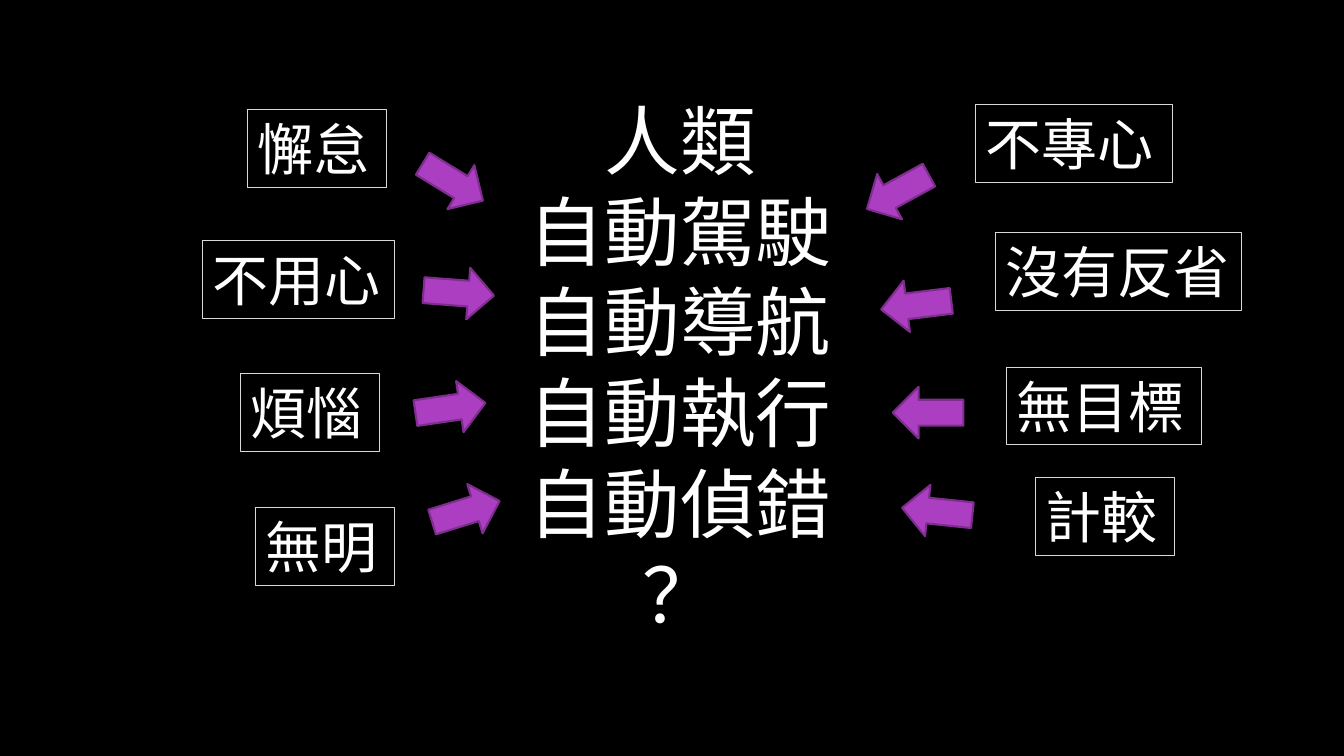
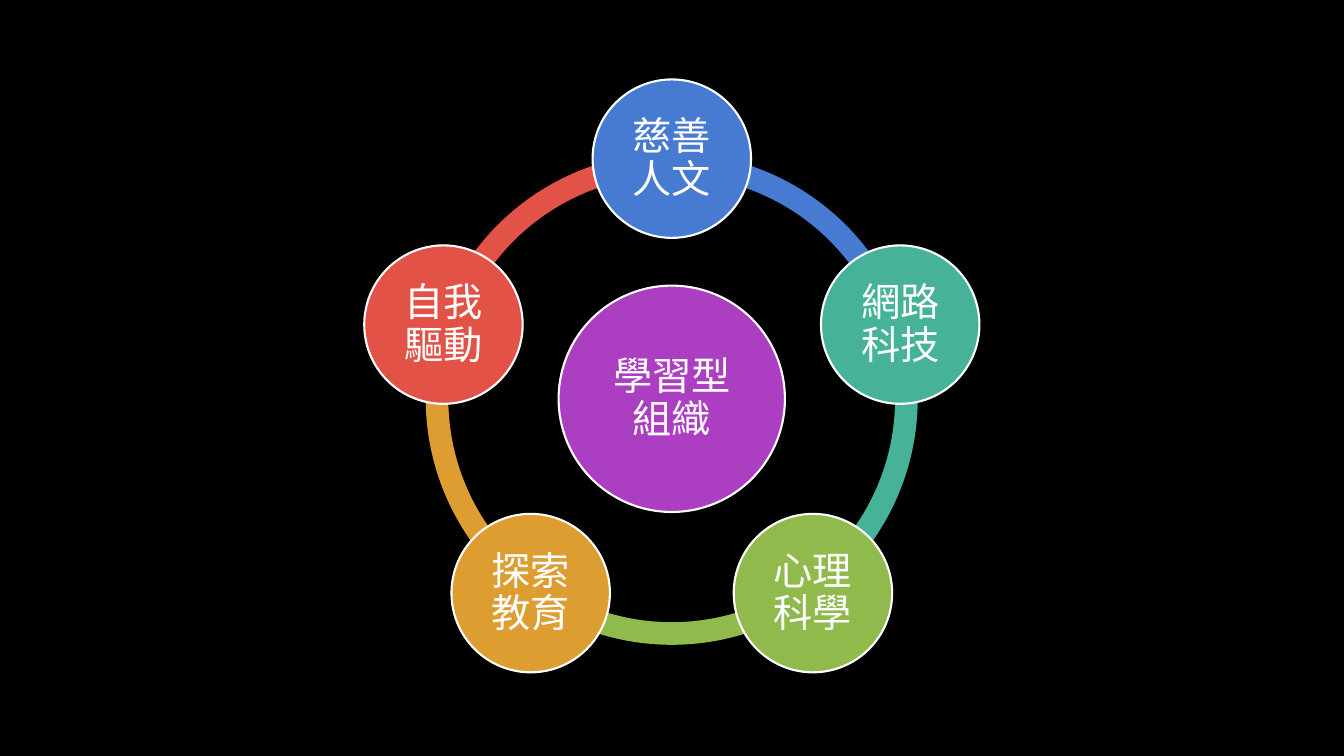
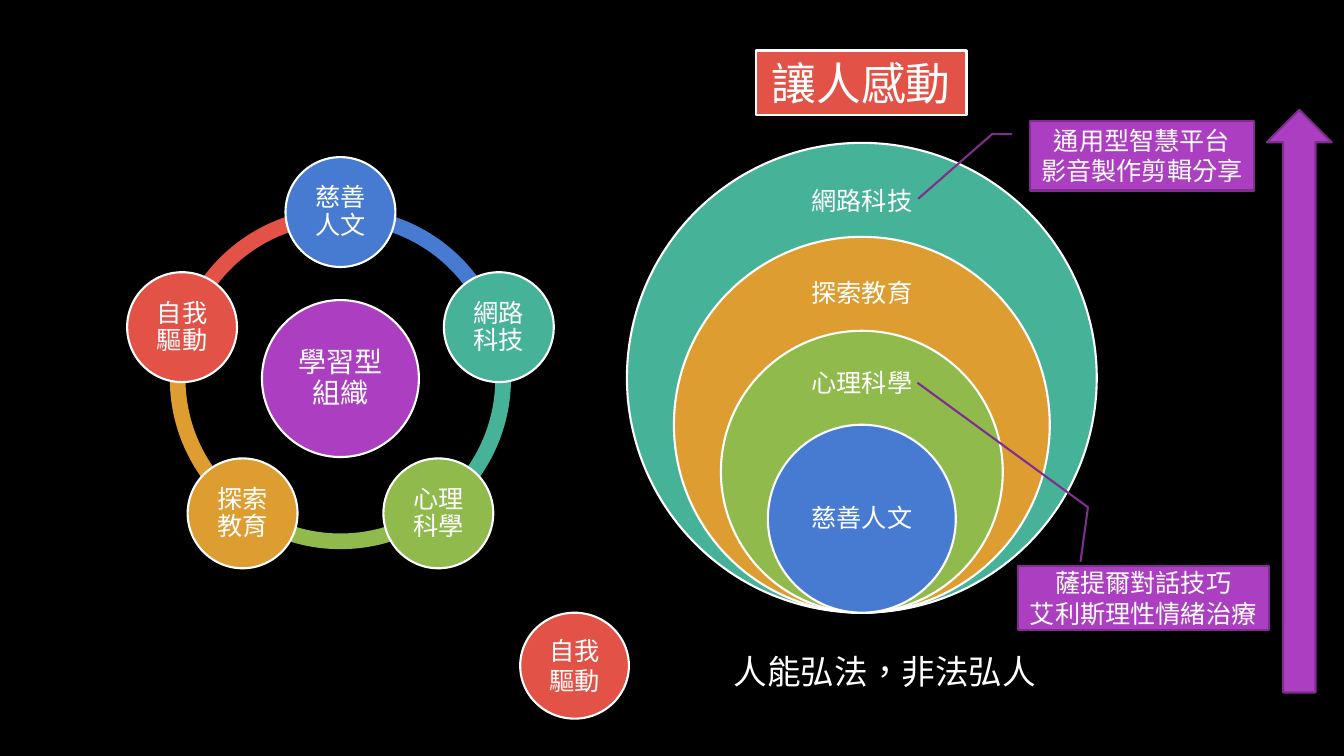
from dataclasses import dataclass
from math import cos, radians, sin
from typing import Optional

from lxml.etree import SubElement
from pptx import Presentation
from pptx.dml.color import RGBColor
from pptx.enum.shapes import MSO_SHAPE as Shape
from pptx.enum.text import MSO_ANCHOR as Anchor, MSO_AUTO_SIZE as AutoSize, PP_ALIGN as Align
from pptx.oxml.ns import qn
from pptx.util import Cm, Pt

FONT = "Noto Sans CJK SC"
BLACK, WHITE, GRAY = "000000", "FFFFFF", "D9D9D9"
PURPLE, PLUM = "AC3EC1", "7F2E8F"
BLUE, TEAL, GREEN, AMBER, RED = "477BD1", "46B298", "90BA4C", "DD9D31", "E25247"
TITLE_ONLY, BLANK = 5, 6


@dataclass
class Box:
    x: float
    y: float
    w: float
    h: float


@dataclass
class Topic:
    text: str
    color: str


@dataclass
class Ring:
    cx: float
    cy: float
    d: float
    hub_size: float
    node_size: float


@dataclass
class Layer:
    text: str
    color: str
    scale: float
    text_y: float


@dataclass
class Label:
    text: str
    box: Box


@dataclass
class Arrow:
    x: float
    y: float
    angle: float


@dataclass
class Callout:
    text: str
    box: Box
    adj: tuple


TOPICS = [
    Topic("慈善人文", BLUE),
    Topic("網路科技", TEAL),
    Topic("心理科學", GREEN),
    Topic("探索教育", AMBER),
    Topic("自我驅動", RED),
]
LAYERS = [
    Layer("網路科技", TEAL, 1, 5.08),
    Layer("探索教育", AMBER, 0.8, 7.4),
    Layer("心理科學", GREEN, 0.6, 9.68),
    Layer("慈善人文", BLUE, 0.4, 13.08),
]
LABELS = [
    Label("懈怠", Box(6.25, 2.77, 3.5, 1.96)),
    Label("不用心", Box(5.1, 6.07, 4.85, 1.96)),
    Label("煩惱", Box(6.07, 9.42, 3.5, 1.96)),
    Label("無明", Box(6.45, 12.8, 3.5, 1.96)),
    Label("不專心", Box(24.59, 2.64, 4.95, 1.96)),
    Label("沒有反省", Box(25.1, 5.87, 6.2, 1.96)),
    Label("無目標", Box(25.37, 9.25, 4.9, 1.96)),
    Label("計較", Box(26.09, 12.04, 3.5, 1.96)),
]
ARROWS = [
    Arrow(10.52, 3.94, 211.5),
    Arrow(10.67, 6.73, 184.4),
    Arrow(10.46, 9.63, 171.7),
    Arrow(10.85, 12.24, 162.7),
    Arrow(21.74, 4.19, 331.3),
    Arrow(22.2, 7.04, 353),
    Arrow(22.5, 9.75, 0),
    Arrow(22.73, 12.24, 6),
]
CALLOUTS = [
    Callout("通用型智慧平台\n影音製作剪輯分享", Box(25.96, 3.05, 5.64, 1.75),
            (0.19, -0.08, 0.19, -0.17, 1.12, -0.5)),
    Callout("薩提爾對話技巧\n艾利斯理性情緒治療", Box(25.65, 14.27, 6.32, 1.6),
            (-0.07, 0.25, -0.93, 0.28, -2.89, -0.4)),
]


def rgb(color: str) -> RGBColor:
    return RGBColor.from_string(color)


def centered(cx: float, cy: float, w: float, h: float) -> Box:
    return Box(cx - w / 2, cy - h / 2, w, h)


def lengths(box: Box) -> tuple:
    return Cm(box.x), Cm(box.y), Cm(box.w), Cm(box.h)


def paint(s, fill: Optional[str], line: Optional[str], width: float) -> None:
    if fill:
        s.fill.solid()
        s.fill.fore_color.rgb = rgb(fill)
    else:
        s.fill.background()
    if line:
        s.line.color.rgb = rgb(line)
        s.line.width = Pt(width)
    else:
        s.line.fill.background()


def add_shape(slide, kind, box: Box, fill: Optional[str] = None, line: Optional[str] = None,
              width: float = 1.5, angle: float = 0, adj: tuple = ()):
    s = slide.shapes.add_shape(kind, *lengths(box))
    s.shadow.inherit = False
    s.rotation = angle
    for i, value in enumerate(adj):
        s.adjustments[i] = value
    paint(s, fill, line, width)
    return s


def write(s, text: str, *, size: float, font: str = FONT, align=Align.CENTER,
          anchor=Anchor.MIDDLE, spacing: float = 1.2, inset: Optional[float] = None) -> None:
    tf = s.text_frame
    tf.word_wrap = True
    tf.auto_size = AutoSize.NONE
    tf.vertical_anchor = anchor
    if inset is not None:
        tf.margin_left = tf.margin_right = tf.margin_top = tf.margin_bottom = Cm(inset)
    for i, line in enumerate(text.split("\n")):
        p = tf.add_paragraph() if i else tf.paragraphs[0]
        p.alignment = align
        p.line_spacing = Pt(round(size * spacing, 1))
        r = p.add_run()
        r.text = line
        r.font.size = Pt(size)
        r.font.name = font
        r.font.color.rgb = rgb(WHITE)
        rPr = r.font._element
        rPr.set("lang", "zh-TW")
        SubElement(rPr, qn("a:ea")).set("typeface", FONT)


def add_text(slide, text: str, box: Box, **style) -> None:
    write(slide.shapes.add_textbox(*lengths(box)), text, **style)


def set_title(slide, text: str, box: Box, **style):
    s = slide.shapes.title
    s.left, s.top, s.width, s.height = lengths(box)
    write(s, text, anchor=Anchor.TOP, **style)
    return s


def add_disc(slide, cx: float, cy: float, d: float, topic: Topic, size: float) -> None:
    s = add_shape(slide, Shape.OVAL, centered(cx, cy, d, d), topic.color, WHITE)
    write(s, topic.text, size=size, spacing=1.08, inset=0.08)


def add_ring(slide, ring: Ring) -> None:
    step = 360 / len(TOPICS)
    angles = [270 + step * i for i in range(len(TOPICS))]
    for topic, angle in zip(TOPICS, angles):
        ends = (angle % 360 * 0.6, (angle + step) % 360 * 0.6)
        add_shape(slide, Shape.BLOCK_ARC, centered(ring.cx, ring.cy, ring.d, ring.d),
                  topic.color, adj=(*ends, 0.046))
    add_disc(slide, ring.cx, ring.cy, ring.d * 0.46, Topic("學習型組織", PURPLE), ring.hub_size)
    orbit = ring.d * 0.488
    for topic, angle in zip(TOPICS, angles):
        a = radians(angle)
        add_disc(slide, ring.cx + orbit * cos(a), ring.cy + orbit * sin(a),
                 ring.d * 0.322, topic, ring.node_size)


def add_layers(slide, cx: float, bottom: float, d: float) -> None:
    for layer in LAYERS:
        size = d * layer.scale
        add_shape(slide, Shape.OVAL, Box(cx - size / 2, bottom - size, size, size),
                  layer.color, WHITE)
        add_text(slide, layer.text, centered(cx, layer.text_y, 3.3, 1.6),
                 size=18, spacing=1.08, inset=0.2)


def build_obstacles(prs) -> None:
    slide = prs.slides.add_slide(prs.slide_layouts[TITLE_ONLY])
    set_title(slide, "人類\n自動駕駛\n自動導航\n自動執行\n自動偵錯\n？",
              Box(11.63, 2.24, 11.02, 14.1), size=54)
    for arrow in ARROWS:
        add_shape(slide, Shape.LEFT_ARROW, Box(arrow.x, arrow.y, 1.78, 1.3),
                  PURPLE, PLUM, angle=arrow.angle)
    for label in LABELS:
        s = add_shape(slide, Shape.RECTANGLE, label.box, line=GRAY, width=0.75)
        write(s, label.text, size=40, font="Calibri", align=Align.LEFT, anchor=Anchor.TOP)


def build_organization(prs) -> None:
    slide = prs.slides.add_slide(prs.slide_layouts[BLANK])
    add_ring(slide, Ring(16.93, 10.05, 12.4, 28, 28))


def build_inspiration(prs) -> None:
    slide = prs.slides.add_slide(prs.slide_layouts[TITLE_ONLY])
    title = set_title(slide, "讓人感動", Box(19.05, 1.27, 5.31, 1.63), size=32)
    paint(title, RED, WHITE, 2)
    add_ring(slide, Ring(8.58, 9.54, 8.6, 20, 18))
    add_layers(slide, 21.72, 15.44, 11.84)
    driver = add_shape(slide, Shape.OVAL, Box(13.11, 15.44, 2.74, 2.67), RED, WHITE)
    write(driver, "自我驅動", size=18)
    add_text(slide, "人能弘法，非法弘人", Box(18.24, 16.28, 9.42, 1.27),
             size=24, align=Align.LEFT, anchor=Anchor.TOP)
    add_shape(slide, Shape.UP_ARROW, Box(31.93, 2.77, 1.63, 14.68), PURPLE, PLUM)
    for callout in CALLOUTS:
        s = add_shape(slide, Shape.LINE_CALLOUT_2, callout.box, PURPLE, PLUM, adj=callout.adj)
        write(s, callout.text, size=18, inset=0.2)


def main() -> None:
    prs = Presentation()
    prs.slide_width, prs.slide_height = Cm(33.87), Cm(19.05)
    background = prs.slide_master.background.fill
    background.solid()
    background.fore_color.rgb = rgb(BLACK)
    build_obstacles(prs)
    build_organization(prs)
    build_inspiration(prs)
    prs.save("out.pptx")


if __name__ == "__main__":
    main()
